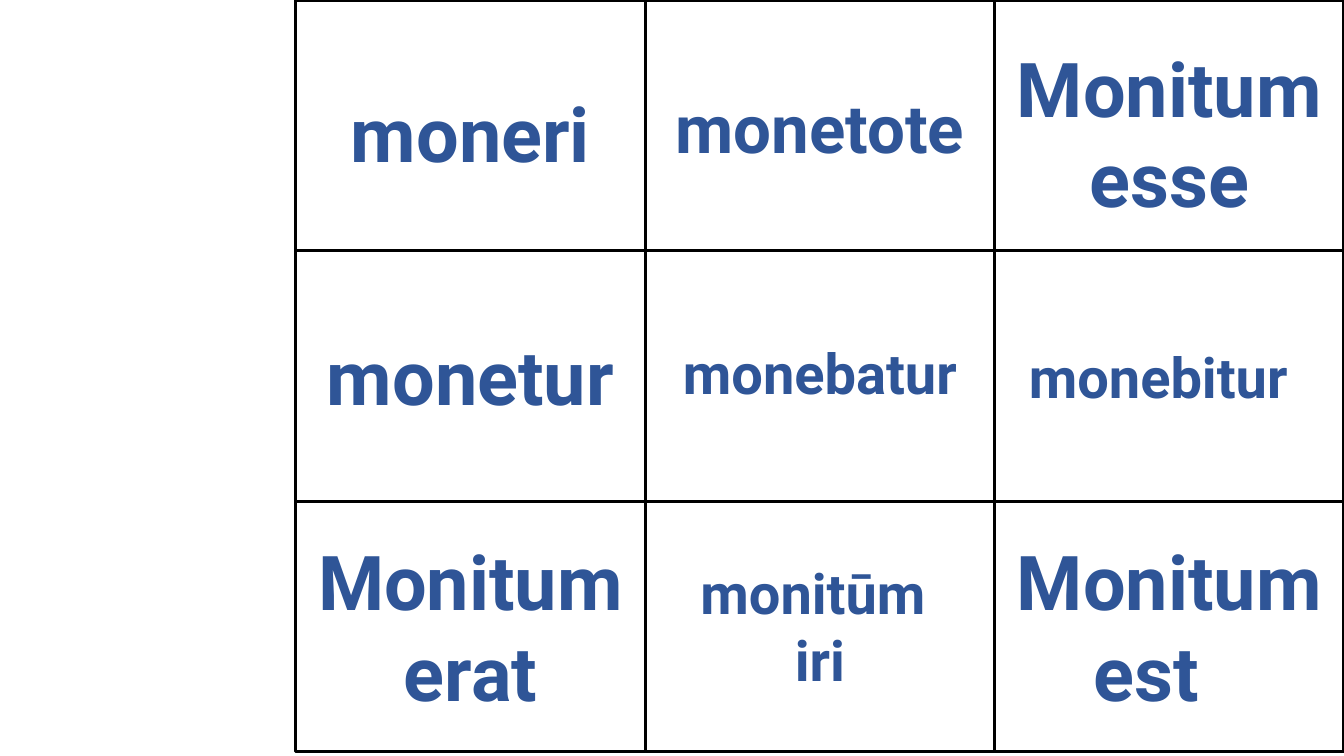
from lxml import etree
from pptx import Presentation
from pptx.dml.color import RGBColor
from pptx.enum.shapes import MSO_SHAPE
from pptx.enum.text import MSO_AUTO_SIZE, PP_ALIGN
from pptx.oxml.ns import qn
from pptx.util import Inches, Pt

RECT = MSO_SHAPE.RECTANGLE
GROW = MSO_AUTO_SIZE.SHAPE_TO_FIT_TEXT
MID = PP_ALIGN.CENTER

WIDE, HIGH = 13.33, 7.5
LEFT = 0.22 * WIDE
COLS = ROWS = 3
COL = (WIDE - LEFT) / COLS
ROW = 7.46 / ROWS
FONT = "Roboto"
BLACK, BLUE, NAVY = "000000", "2F5597", "203864"

# fields: lines, size, box height, drop, shift
WORDS = [
    [(["moneri"], 54, 1.01, 0.07, 0),
     (["monetote"], 48, 0.91, 0.02, 0),
     (["Monitum esse"], 54, 1.92, 0.08, 0)],
    [(["monetur"], 54, 1.01, 0, 0),
     (["monebatur"], 40, 0.77, -0.04, 0),
     (["monebitur"], 40, 0.77, 0, -0.11)],
    [(["Monitum erat"], 54, 1.92, 0, 0),
     (["monitūm ", "iri"], 40, 1.45, 0, 0),
     (["Monitum est\t"], 54, 1.92, 0, 0)],
]


def color(code):
    return RGBColor.from_string(code)


def edge(run, code, width):
    line = etree.Element(qn("a:ln"), w=str(Pt(width)))
    fill = etree.SubElement(line, qn("a:solidFill"))
    etree.SubElement(fill, qn("a:srgbClr"), val=code)
    run.font._element.insert(0, line)


def frame(slide, x, y, w, h):
    box = slide.shapes.add_shape(RECT, Inches(x), Inches(y), Inches(w), Inches(h))
    box.shadow.inherit = False
    box.fill.background()
    box.line.color.rgb = color(BLACK)
    box.line.width = Pt(2.25)


def label(slide, x, y, w, h, lines, size):
    box = slide.shapes.add_textbox(Inches(x), Inches(y), Inches(w), Inches(h))
    text = box.text_frame
    text.word_wrap = True
    text.auto_size = GROW
    for i, line in enumerate(lines):
        para = text.add_paragraph() if i else text.paragraphs[0]
        para.alignment = MID
        run = para.add_run()
        run.text = line
        run.font.name = FONT
        run.font.size = Pt(size)
        run.font.bold = True
        run.font.color.rgb = color(BLUE)
        edge(run, NAVY, 1.75)


def card(slide, x, y, w, h, word):
    lines, size, tall, drop, shift = word
    frame(slide, x, y, w, h)
    label(slide, x + shift, y + (h - tall) / 2 + drop, w, tall, lines, size)


def board(slide, x, y, w, h):
    for r, row in enumerate(WORDS):
        for c, word in enumerate(row):
            card(slide, x + c * w, y + r * h, w, h, word)


def main():
    deck = Presentation()
    deck.slide_width = Inches(WIDE)
    deck.slide_height = Inches(HIGH)
    slide = deck.slides.add_slide(deck.slide_layouts[6])
    board(slide, LEFT, 0, COL, ROW)
    deck.save("out.pptx")


if __name__ == "__main__":
    main()
